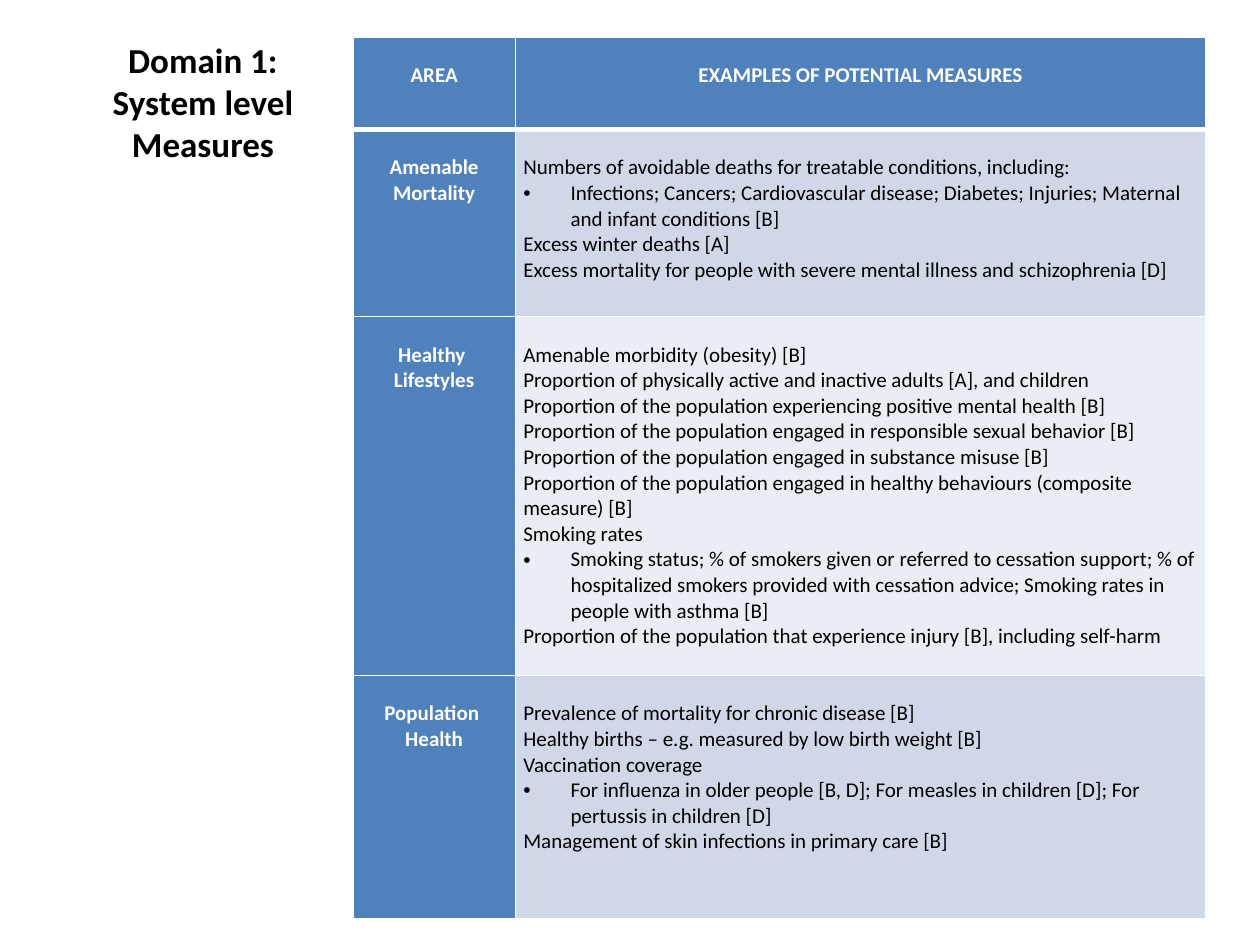
from lxml.etree import SubElement
from pptx import Presentation
from pptx.dml.color import RGBColor
from pptx.enum.text import MSO_ANCHOR, PP_ALIGN
from pptx.oxml.ns import qn
from pptx.util import Pt

# Content: (area lines, measures); a measure starting with BULLET is a bulleted item
BULLET = "• "
TITLE = "Domain 1: System level Measures"
HEADERS = ("AREA", "EXAMPLES OF POTENTIAL MEASURES")
AREAS = [
    (["Amenable Mortality"], [
        "Numbers of avoidable deaths for treatable conditions, including:",
        "• Infections; Cancers; Cardiovascular disease; Diabetes; Injuries; "
        "Maternal and infant conditions [B]",
        "Excess winter deaths [A]",
        "Excess mortality for people with severe mental illness and schizophrenia [D]",
    ]),
    (["Healthy ", "Lifestyles"], [
        "Amenable morbidity (obesity) [B]",
        "Proportion of physically active and inactive adults [A], and children",
        "Proportion of the population experiencing positive mental health [B]",
        "Proportion of the population engaged in responsible sexual behavior [B]",
        "Proportion of the population engaged in substance misuse [B]",
        "Proportion of the population engaged in healthy behaviours (composite measure) [B]",
        "Smoking rates",
        "• Smoking status; % of smokers given or referred to cessation support; "
        "% of hospitalized smokers provided with cessation advice; "
        "Smoking rates in people with asthma [B]",
        "Proportion of the population that experience injury [B], including self-harm",
    ]),
    (["Population ", "Health"], [
        "Prevalence of mortality for chronic disease [B]",
        "Healthy births – e.g. measured by low birth weight [B]",
        "Vaccination coverage",
        "• For influenza in older people [B, D]; For measles in children [D]; "
        "For pertussis in children [D]",
        "Management of skin infections in primary care [B]",
    ]),
]

# Style
FONT = "Calibri"
BLACK = RGBColor(0x00, 0x00, 0x00)
WHITE = RGBColor(0xFF, 0xFF, 0xFF)
BLUE = RGBColor(0x4F, 0x81, 0xBD)
BANDS = (RGBColor(0xD0, 0xD8, 0xE8), RGBColor(0xE9, 0xED, 0xF4))
COLUMN_WIDTHS = (93, 394.5)
ROW_HEIGHTS = (53, 107, 205, 139)
TABLE_LEFT, TABLE_TOP = 201.6, 21
LINE_HEIGHT = 14.6
SIDE_MARGIN = 4.5
BULLET_INDENT = 27


def style_paragraph(paragraph, size, color, bold, align):
    paragraph.alignment = align
    for run in paragraph.runs:
        run.font.name = FONT
        run.font.size = Pt(size)
        run.font.bold = bold
        run.font.color.rgb = color


def add_bullet(paragraph):
    properties = paragraph._p.get_or_add_pPr()
    properties.set("marL", str(Pt(BULLET_INDENT)))
    properties.set("indent", str(-Pt(BULLET_INDENT)))
    SubElement(properties, qn("a:buFont"), typeface="Arial")
    SubElement(properties, qn("a:buChar"), char=BULLET.strip())


def set_borders(cell, widths):
    properties = cell._tc.get_or_add_tcPr()
    for side, width in widths.items():
        line = SubElement(properties, qn(f"a:ln{side}"), w=str(Pt(width)))
        fill = SubElement(line, qn("a:solidFill"))
        SubElement(fill, qn("a:srgbClr"), val=str(WHITE))


def fill_cell(cell, lines, fill, color, bold, align, borders):
    set_borders(cell, borders)
    cell.fill.solid()
    cell.fill.fore_color.rgb = fill
    cell.margin_left = cell.margin_right = Pt(SIDE_MARGIN)
    cell.margin_top, cell.margin_bottom = Pt(LINE_HEIGHT), 0
    cell.vertical_anchor = MSO_ANCHOR.TOP
    cell.text_frame.text = "\n".join(line.removeprefix(BULLET) for line in lines)
    for paragraph, line in zip(cell.text_frame.paragraphs, lines):
        style_paragraph(paragraph, 12, color, bold, align)
        if line.startswith(BULLET):
            add_bullet(paragraph)


presentation = Presentation()
presentation.slide_width, presentation.slide_height = Pt(720), Pt(540)
slide = presentation.slides.add_slide(presentation.slide_layouts[6])

# Title
title = slide.shapes.add_textbox(Pt(36), Pt(21.6), Pt(160), Pt(73))
title.text_frame.word_wrap = True
title.text_frame.vertical_anchor = MSO_ANCHOR.MIDDLE
title.text_frame.text = TITLE
style_paragraph(title.text_frame.paragraphs[0], 20, BLACK, True, PP_ALIGN.CENTER)

# Table grid
table = slide.shapes.add_table(
    len(ROW_HEIGHTS), len(COLUMN_WIDTHS), Pt(TABLE_LEFT), Pt(TABLE_TOP),
    Pt(sum(COLUMN_WIDTHS)), Pt(sum(ROW_HEIGHTS))).table
table.horz_banding = False
for column, width in zip(table.columns, COLUMN_WIDTHS):
    column.width = Pt(width)
for row, height in zip(table.rows, ROW_HEIGHTS):
    row.height = Pt(height)

# Header row
for index, header in enumerate(HEADERS):
    fill_cell(table.cell(0, index), [header], BLUE, WHITE, True, PP_ALIGN.CENTER,
              {"L": 1, "R": 1, "T": 1, "B": 3})

# Area rows
for index, (area, measures) in enumerate(AREAS, start=1):
    borders = {"L": 1, "R": 1, "T": 3 if index == 1 else 1, "B": 1}
    fill_cell(table.cell(index, 0), area, BLUE, WHITE, True, PP_ALIGN.CENTER, borders)
    fill_cell(table.cell(index, 1), measures, BANDS[(index - 1) % 2], BLACK, False,
              PP_ALIGN.LEFT, borders)

presentation.save("out.pptx")
